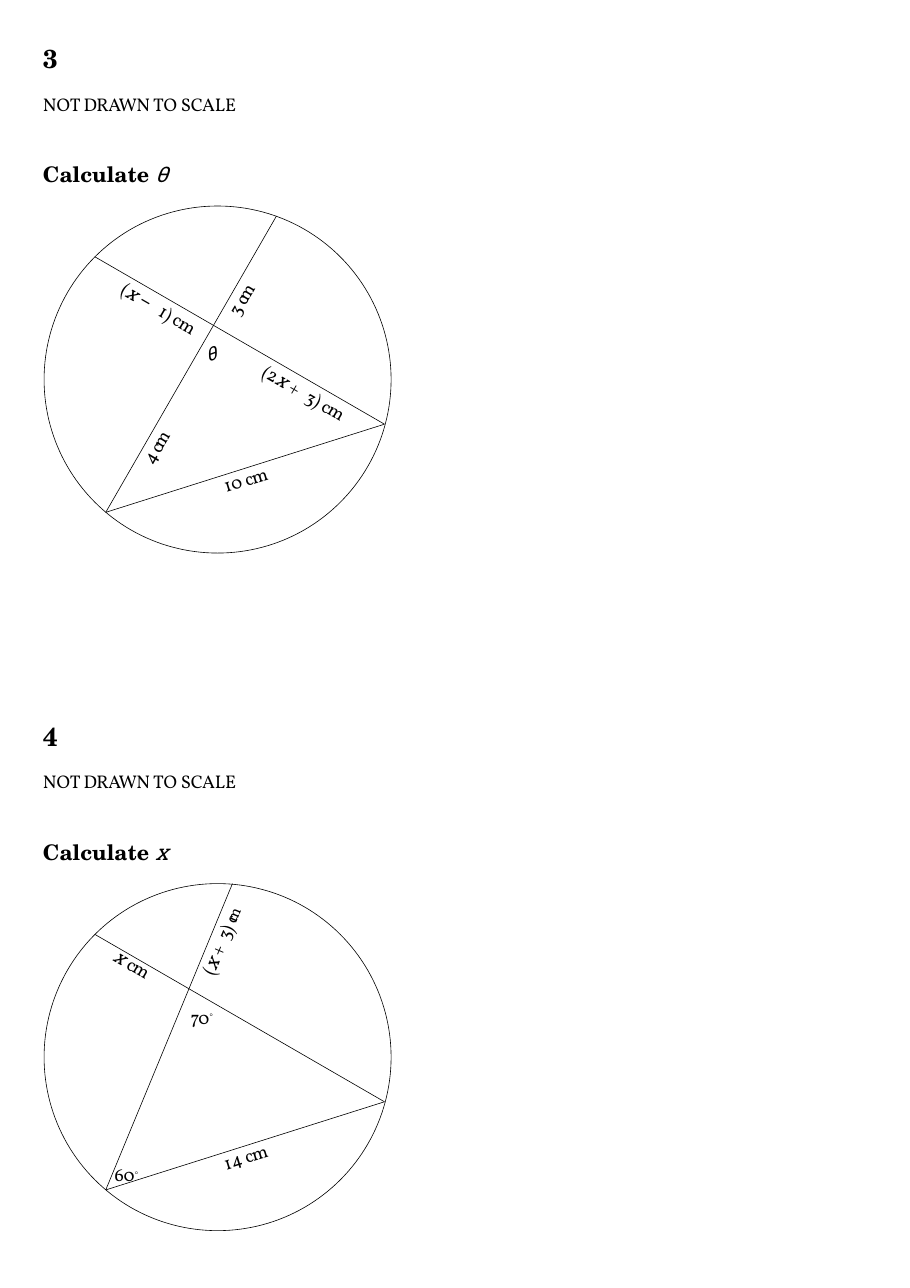
"""Draw two circle-geometry problems on one portrait page."""
import math
from dataclasses import dataclass

import pptx
import pptx.dml.color
import pptx.enum.shapes
import pptx.enum.text
import pptx.util
from lxml import etree
from pptx.util import Inches

BLACK = pptx.dml.color.RGBColor(0, 0, 0)
HEADING = "TeX Gyre Schola"
BODY = "Vollkorn"
MATH = "Roboto Slab"
SYMBOL = "Arial"
PROBLEM_STEP = 6.15
CIRCLE_LEFT, CIRCLE_TOP, DIAMETER = 0.4, 1.87, 3.15
LINE_WIDTH = 0.4
LABEL_HEIGHT = 0.17
ARC_STEPS = 14

Point = tuple[float, float]
CORNER: Point = (0.96, 4.65)
RIGHT_END: Point = (3.49, 3.85)
LEFT_END: Point = (0.86, 2.33)


@dataclass(frozen=True)
class Span:
    text: str
    font: str = BODY
    spacing: float = 0
    italic: bool = False
    size: float | None = None
    baseline: int = 0


@dataclass(frozen=True)
class Label:
    left: float
    top: float
    width: float
    spans: list[Span]
    rotation: float = 0
    line_height: float | None = 11.4
    height: float = LABEL_HEIGHT
    inset_left: float = 0
    inset_top: float = 0


@dataclass(frozen=True)
class AngleArc:
    centre: Point
    radius: float
    start: float
    end: float


@dataclass(frozen=True)
class Problem:
    number: str
    unknown: str
    chord_top: Point
    arc: AngleArc
    labels: list[Label]


def variable(text: str) -> Span:
    return Span(text, MATH, italic=True)


def short_length(number: str, left: float, top: float) -> Label:
    return Label(left, top, 0.38, [Span(f"{number} ", spacing=-0.5), Span("cm", spacing=-2.3)], 301)


def base_length(number: str) -> Label:
    return Label(2.03, 4.28, 0.46, [Span(f"{number} "), Span("cm", spacing=-0.7)], 343)


def degrees(number: str, left: float, top: float) -> Label:
    spans = [Span(number, spacing=-0.2), Span("◦", SYMBOL, -0.4, True, baseline=31)]
    return Label(left, top, 0.3, spans, line_height=None, height=0.23, inset_left=0.04, inset_top=0.02)


PROBLEMS = [
    Problem("3", "θ", (2.51, 1.96), AngleArc((1.89, 3.03), 0.41, 17, 121), [
        short_length("4", 1.26, 3.96),
        short_length("3", 2.04, 2.61),
        Label(2.33, 3.51, 0.86, [Span("(2"), variable("x "), Span("+ ", spacing=1.8),
                                 Span("3) "), Span("cm", spacing=-0.7)], 30, 11.3),
        Label(1.01, 2.82, 0.78, [Span("("), variable("x "), Span("− ", SYMBOL, 2.2, True),
                                 Span("1) "), Span("cm", spacing=-0.7)], 30, 5),
        base_length("10"),
        Label(1.87, 3.14, 0.18, [Span("θ", MATH, -1.6, True)], 340),
    ]),
    Problem("4", "x", (2.11, 1.87), AngleArc((1.71, 2.8), 0.41, 32, 110), [
        Label(1.68, 2.26, 0.78, [Span("(", spacing=-0.2), Span("x ", MATH, -0.2, True),
                                 Span("+ ", spacing=1.3), Span("3) ", spacing=-0.2),
                                 Span("cm", spacing=-3.5, size=18, baseline=2)], 293, 11.5),
        Label(1.01, 2.55, 0.39, [variable("x "), Span("cm", spacing=-0.8)], 30, 11.3),
        base_length("14"),
        degrees("70", 1.69, 2.96),
        degrees("60", 1, 4.39),
    ]),
]


def add_box(page, left: float, top: float, width: float, height: float,
            inset_left: float, inset_top: float):
    """Add an auto-growing text box with the given insets."""
    box = page.shapes.add_textbox(Inches(left), Inches(top), Inches(width), Inches(height))
    frame = box.text_frame
    frame.word_wrap = True
    frame.auto_size = pptx.enum.text.MSO_AUTO_SIZE.SHAPE_TO_FIT_TEXT
    frame.margin_left, frame.margin_top = Inches(inset_left), Inches(inset_top)
    frame.margin_right = frame.margin_bottom = 0
    return box


def fill_para(para, spans: list[Span], size: float, bold: bool = False) -> None:
    """Write spans into a paragraph, keeping shared formatting on the paragraph."""
    para.font.size = pptx.util.Pt(size)
    para.font.color.rgb = BLACK
    para.font.bold = bold
    shared_font = len({span.font for span in spans}) == 1
    if shared_font:
        para.font.name = spans[0].font
    for span in spans:
        run = para.add_run()
        run.text = span.text
        if not shared_font:
            run.font.name = span.font
        if span.italic:
            run.font.italic = True
        if bold and span.font == MATH:
            run.font.bold = False
        if span.size:
            run.font.size = pptx.util.Pt(span.size)
        properties = run.font._element
        if span.spacing:
            properties.set("spc", str(round(span.spacing * 100)))
        if span.baseline:
            properties.set("baseline", str(span.baseline * 1000))


def add_heading(page, problem: Problem, offset: float) -> None:
    """Add the number, the scale warning and the task."""
    frame = add_box(page, 0.38, 0.35 + offset, 1.98, 1.37, 0.01, 0.04).text_frame
    fill_para(frame.paragraphs[0], [Span(problem.number, HEADING, -0.9)], 17, True)
    warning = frame.add_paragraph()
    warning.space_before = pptx.util.Pt(12.2)
    fill_para(warning, [Span("NOT "), Span("DRAWN ", spacing=-0.4), Span("TO "),
                        Span("SCALE", spacing=-0.1)], 12)
    task = frame.add_paragraph()
    task.space_before = pptx.util.Pt(30.5)
    fill_para(task, [Span("Calculate ", HEADING), Span(problem.unknown, MATH, -0.5, True)], 14, True)


def style_line(shape) -> None:
    shape.line.color.rgb = BLACK
    shape.line.width = pptx.util.Pt(LINE_WIDTH)


def add_segment(page, start: Point, end: Point, offset: float) -> None:
    """Add a straight line between two points of a figure."""
    segment = page.shapes.add_connector(
        pptx.enum.shapes.MSO_CONNECTOR.STRAIGHT, Inches(start[0]), Inches(start[1] + offset),
        Inches(end[0]), Inches(end[1] + offset))
    style_line(segment)
    etree.SubElement(segment._element.spPr, pptx.oxml.ns.qn("a:effectLst"))


def add_outline(shape) -> None:
    shape.fill.background()
    shape.shadow.inherit = False
    style_line(shape)


def add_arc(page, arc: AngleArc, offset: float) -> None:
    """Mark an angle with an open arc."""
    points = []
    for step in range(ARC_STEPS + 1):
        angle = math.radians(arc.start + (arc.end - arc.start) * step / ARC_STEPS)
        points.append((arc.centre[0] + arc.radius * math.cos(angle),
                       arc.centre[1] + offset + arc.radius * math.sin(angle)))
    builder = page.shapes.build_freeform(*points[0], scale=Inches(1))
    builder.add_line_segments(points[1:], close=False)
    add_outline(builder.convert_to_shape())


def add_label(page, label: Label, offset: float) -> None:
    """Add a label of the figure."""
    box = add_box(page, label.left, label.top + offset, label.width, label.height,
                  label.inset_left, label.inset_top)
    box.rotation = label.rotation
    para = box.text_frame.paragraphs[0]
    if label.line_height:
        para.line_spacing = pptx.util.Pt(label.line_height)
    fill_para(para, label.spans, 12)


def add_problem(page, problem: Problem, offset: float) -> None:
    """Draw one problem with its heading, circle, chords and labels."""
    add_heading(page, problem, offset)
    add_outline(page.shapes.add_shape(
        pptx.enum.shapes.MSO_SHAPE.OVAL, Inches(CIRCLE_LEFT), Inches(CIRCLE_TOP + offset),
        Inches(DIAMETER), Inches(DIAMETER)))
    for start, end in ((CORNER, problem.chord_top), (LEFT_END, RIGHT_END), (CORNER, RIGHT_END)):
        add_segment(page, start, end, offset)
    add_arc(page, problem.arc, offset)
    for label in problem.labels:
        add_label(page, label, offset)


def main() -> None:
    deck = pptx.Presentation()
    deck.slide_width, deck.slide_height = Inches(8.26), Inches(11.69)
    page = deck.slides.add_slide(deck.slide_layouts[6])
    for index, problem in enumerate(PROBLEMS):
        add_problem(page, problem, index * PROBLEM_STEP)
    deck.save("out.pptx")


if __name__ == "__main__":
    main()
